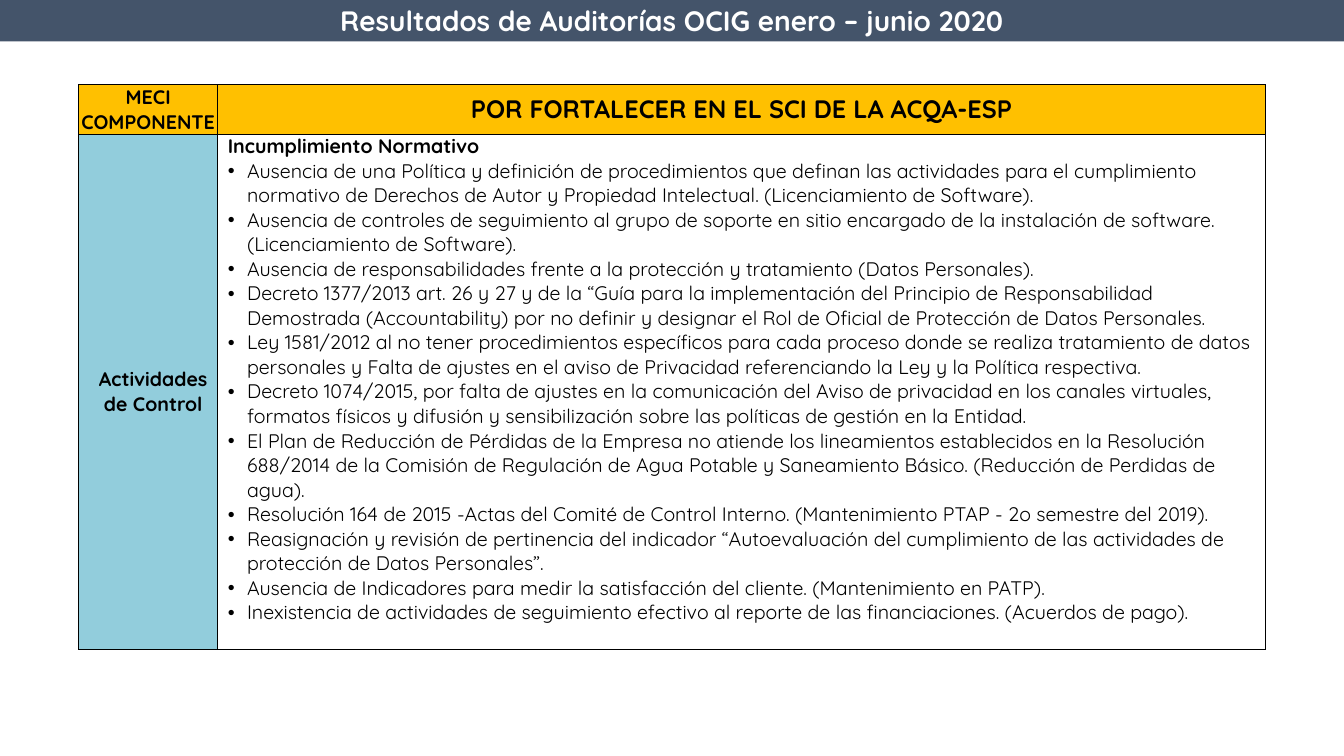
from lxml import etree
from pptx import Presentation
from pptx.dml.color import RGBColor
from pptx.enum.shapes import MSO_SHAPE
from pptx.enum.text import MSO_ANCHOR, PP_ALIGN
from pptx.oxml.ns import qn
from pptx.util import Inches, Pt

RECTANGLE = MSO_SHAPE.RECTANGLE
TOP, MIDDLE = MSO_ANCHOR.TOP, MSO_ANCHOR.MIDDLE
LEFT, CENTER = PP_ALIGN.LEFT, PP_ALIGN.CENTER

FONT = "Quicksand"
BLACK, WHITE = "000000", "FFFFFF"
SLATE, AMBER, AQUA = "44546A", "FFC000", "92CDDC"

FINDINGS_TITLE = "Incumplimiento Normativo"
FINDINGS = [
    "Ausencia de una Política y definición de procedimientos que definan las actividades para el "
    "cumplimiento normativo de Derechos de Autor y Propiedad Intelectual. (Licenciamiento de Software).",
    "Ausencia de controles de seguimiento al grupo de soporte en sitio encargado de la instalación "
    "de software. (Licenciamiento de Software).",
    "Ausencia de responsabilidades frente a la protección y tratamiento (Datos Personales).",
    "Decreto 1377/2013 art. 26 y 27 y de la “Guía para la implementación del Principio de "
    "Responsabilidad Demostrada (Accountability) por no definir y designar el Rol de Oficial de "
    "Protección de Datos Personales.",
    "Ley 1581/2012 al no tener procedimientos específicos para cada proceso donde se realiza "
    "tratamiento de datos personales y Falta de ajustes en el aviso de Privacidad referenciando "
    "la Ley y la Política respectiva.",
    "Decreto 1074/2015, por falta de ajustes en la comunicación del Aviso de privacidad en los "
    "canales virtuales, formatos físicos y difusión y sensibilización sobre las políticas de "
    "gestión en la Entidad.",
    "El Plan de Reducción de Pérdidas de la Empresa no atiende los lineamientos establecidos en la "
    "Resolución 688/2014 de la Comisión de Regulación de Agua Potable y Saneamiento Básico. "
    "(Reducción de Perdidas de agua).",
    "Resolución 164 de 2015 -Actas del Comité de Control Interno. (Mantenimiento PTAP - 2o semestre "
    "del 2019).",
    "Reasignación y revisión de pertinencia del indicador “Autoevaluación del cumplimiento de las "
    "actividades de protección de Datos Personales”.",
    "Ausencia de Indicadores para medir la satisfacción del cliente. (Mantenimiento en PATP).",
    "Inexistencia de actividades de seguimiento efectivo al reporte de las financiaciones. "
    "(Acuerdos de pago).",
]


def color(value):
    return RGBColor.from_string(value)


def set_indent(paragraph, margin, first_line=0, bullet=None):
    properties = paragraph._p.get_or_add_pPr()
    properties.set("marL", str(Inches(margin)))
    properties.set("indent", str(Inches(first_line)))
    if bullet:
        etree.SubElement(properties, qn("a:buFont")).set("typeface", "Arial")
        etree.SubElement(properties, qn("a:buChar")).set("char", bullet)


def format_paragraph(paragraph, size, bold=True, font_color=BLACK, align=CENTER):
    paragraph.alignment = align
    for run in paragraph.runs:
        run.font.name = FONT
        run.font.size = Pt(size)
        run.font.bold = bold
        run.font.color.rgb = color(font_color)


def add_title_bar(slide, text):
    bar = slide.shapes.add_shape(RECTANGLE, 0, 0, Inches(13.33), Inches(0.41))
    bar.shadow.inherit = False
    bar.fill.solid()
    bar.fill.fore_color.rgb = color(SLATE)
    bar.line.fill.background()
    bar.text_frame.text = text
    bar.text_frame.vertical_anchor = MIDDLE
    format_paragraph(bar.text_frame.paragraphs[0], 20, font_color=WHITE)


def add_borders(cell):
    properties = cell._tc.get_or_add_tcPr()
    for position, side in enumerate(("a:lnL", "a:lnR", "a:lnT", "a:lnB")):
        line = etree.Element(qn(side), w=str(Pt(0.5)))
        fill = etree.SubElement(line, qn("a:solidFill"))
        etree.SubElement(fill, qn("a:srgbClr")).set("val", BLACK)
        properties.insert(position, line)


def fill_cell(cell, text, size=14, fill=None, anchor=MIDDLE):
    cell.margin_left = cell.margin_right = cell.margin_top = cell.margin_bottom = 0
    cell.vertical_anchor = anchor
    if fill:
        cell.fill.solid()
        cell.fill.fore_color.rgb = color(fill)
    else:
        cell.fill.background()
    add_borders(cell)
    cell.text_frame.text = text
    for paragraph in cell.text_frame.paragraphs:
        format_paragraph(paragraph, size)


def add_findings_table(slide):
    frame = slide.shapes.add_table(2, 2, Inches(0.78), Inches(0.84), Inches(11.77), Inches(5.6))
    table = frame.table
    for column, width in zip(table.columns, (1.38, 10.39)):
        column.width = Inches(width)
    for row, height in zip(table.rows, (0.49, 5.11)):
        row.height = Inches(height)

    # Header row
    fill_cell(table.cell(0, 0), "MECI COMPONENTE", fill=AMBER)
    fill_cell(table.cell(0, 1), "POR FORTALECER EN EL SCI DE LA ACQA-ESP", size=18, fill=AMBER)

    # Component name
    component = table.cell(1, 0)
    fill_cell(component, "Actividades\nde Control", fill=AQUA)
    for paragraph in component.text_frame.paragraphs:
        set_indent(paragraph, 0.1)

    # Heading and bulleted findings
    findings = table.cell(1, 1)
    fill_cell(findings, "\n".join([FINDINGS_TITLE] + FINDINGS), anchor=TOP)
    heading, *items = findings.text_frame.paragraphs
    set_indent(heading, 0.1)
    heading.alignment = LEFT
    for item in items:
        set_indent(item, 0.29, -0.19, "•")
        format_paragraph(item, 14, bold=False, align=LEFT)


def main():
    presentation = Presentation()
    presentation.slide_width = Inches(13.33)
    presentation.slide_height = Inches(7.5)
    slide = presentation.slides.add_slide(presentation.slide_layouts[6])
    add_title_bar(slide, "Resultados de Auditorías OCIG enero – junio 2020")
    add_findings_table(slide)
    presentation.save("out.pptx")


if __name__ == "__main__":
    main()
